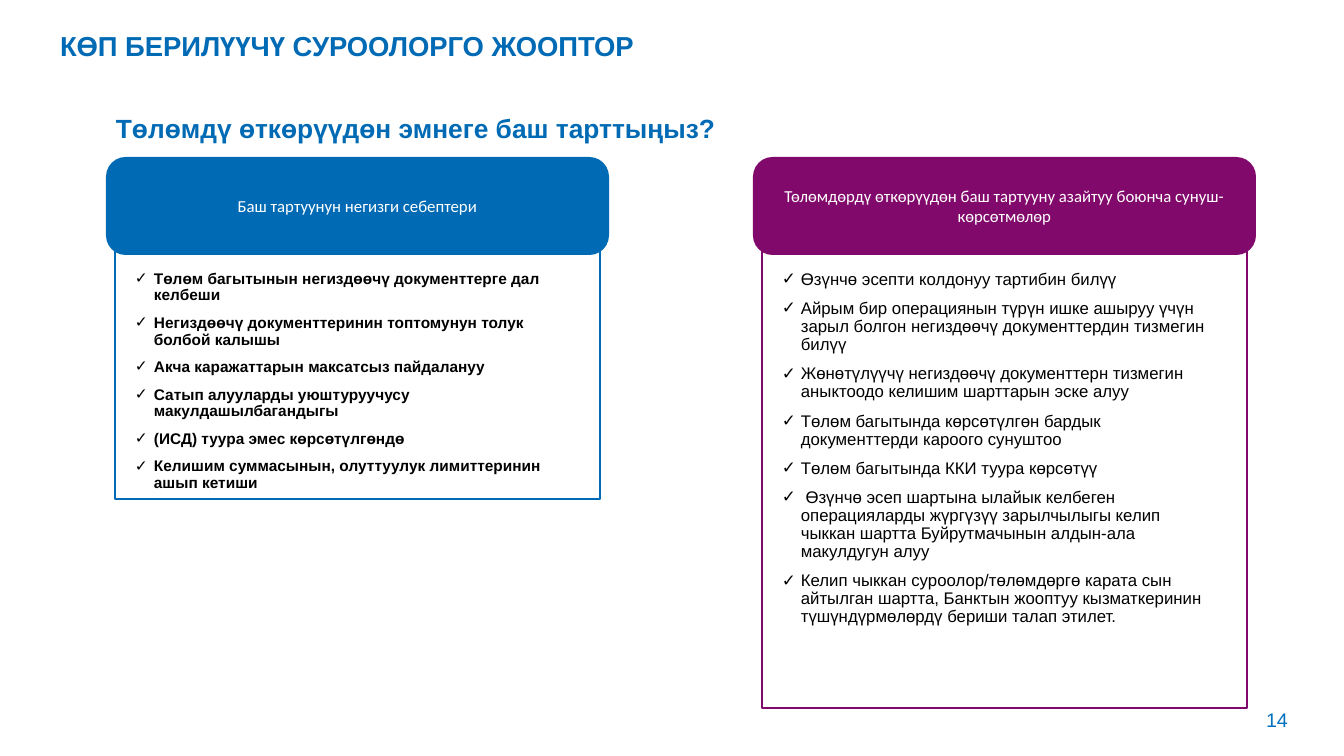
from lxml import etree
from pptx import Presentation
from pptx.dml.color import RGBColor
from pptx.enum.shapes import MSO_SHAPE
from pptx.enum.text import MSO_ANCHOR, PP_ALIGN
from pptx.oxml.ns import qn
from pptx.util import Pt

PX = 914400 / 100.8
RECT, ROUNDED = MSO_SHAPE.RECTANGLE, MSO_SHAPE.ROUNDED_RECTANGLE
LEFT, CENTER = PP_ALIGN.LEFT, PP_ALIGN.CENTER
TOP, MIDDLE = MSO_ANCHOR.TOP, MSO_ANCHOR.MIDDLE
COLORS = {"blue": "006AB4", "purple": "82096C", "number": "0070C0",
          "white": "FFFFFF", "black": "000000"}


def px(*lengths):
    """Turn pixel lengths into EMU."""
    return [round(length * PX) for length in lengths]


def write(shape, paragraphs, *, size, color, font="Arial", bold=False, align=LEFT,
          anchor=TOP, spacing=1.0, before=0, inset=None, bullet=None, indent=19):
    """Fill a shape with paragraphs that share one format."""
    frame = shape.text_frame
    frame.word_wrap = True
    frame.vertical_anchor = anchor
    if inset is not None:
        frame.margin_left = frame.margin_right = inset
        frame.margin_top = frame.margin_bottom = inset
    for index, text in enumerate(paragraphs):
        paragraph = frame.add_paragraph() if index else frame.paragraphs[0]
        paragraph.text = text
        paragraph.alignment = align
        paragraph.line_spacing = spacing
        paragraph.space_before = Pt(before if index else 0)
        if bullet:
            properties = paragraph._p.get_or_add_pPr()
            hang = px(indent)[0]
            properties.set("marL", str(hang))
            properties.set("indent", str(-hang))
            etree.SubElement(properties, qn("a:buFont")).set("typeface", "Arial")
            etree.SubElement(properties, qn("a:buChar")).set("char", bullet)
        for run in paragraph.runs:
            run.font.name = font
            run.font.size = Pt(size)
            run.font.bold = bold
            run.font.color.rgb = RGBColor.from_string(COLORS[color])


columns = [
    {"left": 106, "color": "blue", "panel": (241, 258), "size": 11, "bold": True,
     "heading": "Баш тартуунун негизги себептери",
     "points": [
         "Төлөм багытынын негиздөөчү документтерге дал келбеши",
         "Негиздөөчү документтеринин топтомунун толук болбой калышы",
         "Акча каражаттарын максатсыз пайдалануу",
         "Сатып алууларды уюштуруучусу макулдашылбагандыгы",
         "(ИСД) туура эмес көрсөтүлгөндө",
         "Келишим суммасынын, олуттуулук лимиттеринин ашып кетиши",
     ]},
    {"left": 753, "color": "purple", "panel": (245, 463), "size": 12, "bold": False,
     "heading": "Төлөмдөрдү өткөрүүдөн баш тартууну азайтуу боюнча сунуш-көрсөтмөлөр",
     "points": [
         "Өзүнчө эсепти колдонуу тартибин билүү",
         "Айрым бир операциянын түрүн ишке ашыруу үчүн зарыл болгон негиздөөчү "
         "документтердин тизмегин билүү",
         "Жөнөтүлүүчү негиздөөчү документтерн тизмегин аныктоодо келишим шарттарын "
         "эске алуу",
         "Төлөм багытында көрсөтүлгөн бардык документтерди кароого сунуштоо",
         "Төлөм багытында ККИ туура көрсөтүү",
         " Өзүнчө эсеп шартына ылайык келбеген операцияларды жүргүзүү зарылчылыгы "
         "келип чыккан шартта Буйрутмачынын алдын-ала макулдугун алуу",
         "Келип чыккан суроолор/төлөмдөргө карата сын айтылган шартта, Банктын "
         "жооптуу кызматкеринин түшүндүрмөлөрдү бериши талап этилет.",
     ]},
]

deck = Presentation()
deck.slide_width, deck.slide_height = px(1344, 756)
slide = deck.slides.add_slide(deck.slide_layouts[6])
shapes = slide.shapes

write(shapes.add_textbox(*px(60, 33, 1176, 30)), ["КӨП БЕРИЛҮҮЧҮ СУРООЛОРГО ЖООПТОР"],
      size=19.6, color="blue", bold=True, spacing=0.9, inset=0)
write(shapes.add_textbox(*px(106, 107, 1234, 42)),
      ["Төлөмдү өткөрүүдөн эмнеге баш тарттыңыз?"],
      size=18.8, color="blue", bold=True)
write(shapes.add_textbox(*px(1247, 708, 60, 48)), ["14"],
      size=14, color="number", align=CENTER, inset=0)

for column in columns:
    left = column["left"]
    accent = RGBColor.from_string(COLORS[column["color"]])
    panel_top, panel_height = column["panel"]

    panel = shapes.add_shape(RECT, *px(left + 9, panel_top, 485, panel_height))
    panel.shadow.inherit = False
    panel.fill.solid()
    panel.fill.fore_color.rgb = RGBColor.from_string(COLORS["white"])
    panel.line.color.rgb = accent
    panel.line.width = Pt(1)

    write(shapes.add_textbox(*px(left + 19, 266, 447, 419)), column["points"],
          size=column["size"], color="black", bold=column["bold"],
          spacing=0.9, before=7.8, bullet="✓")

    header = shapes.add_shape(ROUNDED, *px(left, 157, 503, 98))
    header.adjustments[0] = 0.2
    header.shadow.inherit = False
    header.fill.solid()
    header.fill.fore_color.rgb = accent
    header.line.fill.background()
    write(header, [column["heading"]], size=12, color="white", font="Calibri",
          align=CENTER, anchor=MIDDLE)

deck.save("out.pptx")
